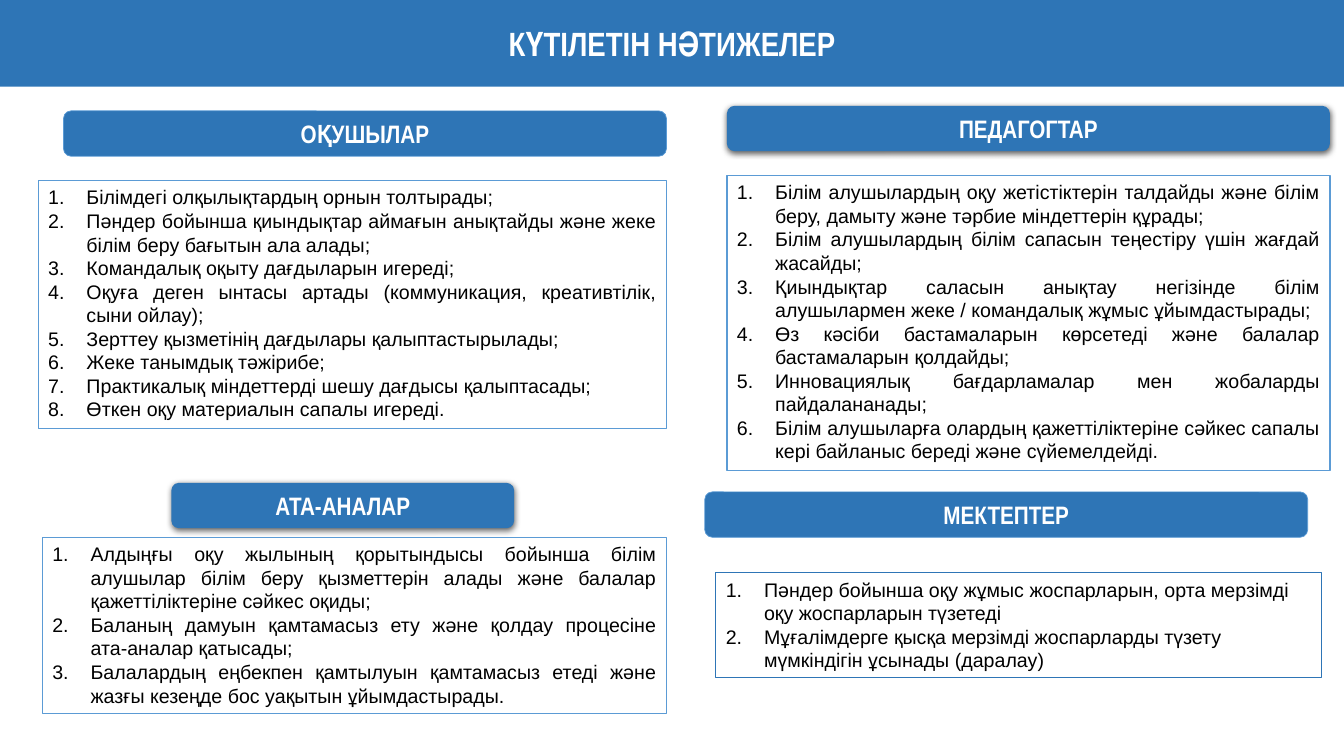
from dataclasses import dataclass

from lxml.etree import SubElement
from pptx import Presentation
from pptx.dml.color import RGBColor
from pptx.enum.shapes import MSO_SHAPE
from pptx.enum.text import MSO_ANCHOR, MSO_AUTO_SIZE, PP_ALIGN
from pptx.oxml.ns import qn
from pptx.util import Inches, Pt


@dataclass(frozen=True)
class Theme:
    band: RGBColor = RGBColor(0x2E, 0x75, 0xB6)
    outline: RGBColor = RGBColor(0x5B, 0x9B, 0xD5)
    white: RGBColor = RGBColor(0xFF, 0xFF, 0xFF)
    black: RGBColor = RGBColor(0, 0, 0)
    heading_font: str = "Arial Narrow"
    body_font: str = "Arial"
    title_size: int = 24
    heading_size: int = 18
    body_size: int = 14
    number_indent: float = 0.38


def apply_format(target, values):
    for name, value in values.items():
        setattr(target, name, value)


class OutcomesSlide:
    def __init__(self, deck, theme):
        self.theme = theme
        self.slide = deck.slides.add_slide(deck.slide_layouts[5])

    def place(self, shape, box):
        sides = ("left", "top", "width", "height")
        apply_format(shape, dict(zip(sides, map(Inches, box))))

    def paint(self, shape, fill=None, line=None, line_width=1):
        if fill is None:
            shape.fill.background()
        else:
            shape.fill.solid()
            shape.fill.fore_color.rgb = fill
        if line is None:
            shape.line.fill.background()
        else:
            shape.line.color.rgb = line
            shape.line.width = Pt(line_width)

    def set_text(self, shape, lines, anchor, align, font, size, color, bold=False):
        frame = shape.text_frame
        apply_format(frame, {"word_wrap": True, "auto_size": MSO_AUTO_SIZE.NONE,
                             "vertical_anchor": anchor})
        frame.text = "\n".join(lines)
        for paragraph in frame.paragraphs:
            paragraph.alignment = align
            run_font = paragraph.runs[0].font
            apply_format(run_font, {"name": font, "size": Pt(size), "bold": bold})
            run_font.color.rgb = color

    def set_heading_text(self, shape, text, size):
        self.set_text(shape, [text], MSO_ANCHOR.MIDDLE, PP_ALIGN.CENTER,
                      self.theme.heading_font, size, self.theme.white, bold=True)

    def add_box(self, preset, box):
        shape = self.slide.shapes.add_shape(preset, *map(Inches, box))
        shape.shadow.inherit = False
        return shape

    def title(self, text, box):
        banner = self.slide.shapes.title
        self.place(banner, box)
        self.paint(banner, self.theme.band)
        self.set_heading_text(banner, text, self.theme.title_size)

    def heading(self, text, box, raised):
        """Add a rounded heading, raised by a shadow or outlined."""
        plate = self.add_box(MSO_SHAPE.ROUNDED_RECTANGLE, box)
        self.paint(plate, self.theme.band, None if raised else self.theme.outline, 0.5)
        if raised:
            self.cast_shadow(plate)
        self.set_heading_text(plate, text, self.theme.heading_size)

    def cast_shadow(self, shape):
        effects = shape._element.spPr.find(qn("a:effectLst"))
        shadow = SubElement(effects, qn("a:outerShdw"), blurRad=str(Pt(4.5)),
                            dist=str(Pt(1.5)), dir="5400000", rotWithShape="0")
        color = SubElement(shadow, qn("a:srgbClr"), val=str(self.theme.black))
        SubElement(color, qn("a:alpha"), val="63000")

    def numbered_list(self, items, box, align, **paint):
        panel = self.add_box(MSO_SHAPE.RECTANGLE, box)
        self.paint(panel, **paint)
        self.set_text(panel, items, MSO_ANCHOR.TOP, align, self.theme.body_font,
                      self.theme.body_size, self.theme.black)
        indent = Inches(self.theme.number_indent)
        for paragraph in panel.text_frame.paragraphs:
            properties = paragraph._p.get_or_add_pPr()
            properties.set("marL", str(indent))
            properties.set("indent", str(-indent))
            SubElement(properties, qn("a:buFont"), typeface="+mj-lt")
            SubElement(properties, qn("a:buAutoNum"), type="arabicPeriod")


def main():
    theme = Theme()
    deck = Presentation()
    apply_format(deck, {"slide_width": Inches(13.33), "slide_height": Inches(7.5)})
    outcomes = OutcomesSlide(deck, theme)
    outcomes.title("КҮТІЛЕТІН НӘТИЖЕЛЕР", (0, 0, 13.33, 0.86))

    justified = {"align": PP_ALIGN.JUSTIFY, "fill": theme.white, "line": theme.outline}
    plain = {"align": PP_ALIGN.LEFT, "line": theme.band, "line_width": 0.75}
    # heading, heading box, raised, list box, list format, items
    groups = [
        ("ОҚУШЫЛАР", (0.63, 1.1, 5.98, 0.45), False, (0.38, 1.79, 6.23, 2.46), justified, [
            "Білімдегі олқылықтардың орнын толтырады;",
            "Пәндер бойынша қиындықтар аймағын анықтайды және жеке білім беру бағытын ала алады;",
            "Командалық оқыту дағдыларын игереді;",
            "Оқуға деген ынтасы артады (коммуникация, креативтілік, сыни ойлау);",
            "Зерттеу қызметінің дағдылары қалыптастырылады;",
            "Жеке танымдық тәжірибе;",
            "Практикалық міндеттерді шешу дағдысы қалыптасады;",
            "Өткен оқу материалын сапалы игереді.",
        ]),
        ("ПЕДАГОГТАР", (7.21, 1.05, 5.98, 0.45), True, (7.21, 1.74, 5.98, 2.93), justified, [
            "Білім алушылардың оқу жетістіктерін талдайды және білім беру, дамыту "
            "және тәрбие міндеттерін құрады;",
            "Білім алушылардың білім сапасын теңестіру үшін жағдай жасайды;",
            "Қиындықтар саласын анықтау негізінде білім алушылармен жеке / "
            "командалық жұмыс ұйымдастырады;",
            "Өз кәсіби бастамаларын көрсетеді және балалар бастамаларын қолдайды;",
            "Инновациялық бағдарламалар мен жобаларды пайдалананады;",
            "Білім алушыларға олардың қажеттіліктеріне сәйкес сапалы кері байланыс "
            "береді және сүйемелдейді.",
        ]),
        ("АТА-АНАЛАР", (1.7, 4.79, 3.4, 0.45), True, (0.42, 5.33, 6.19, 1.75), justified, [
            "Алдыңғы оқу жылының қорытындысы бойынша білім алушылар білім беру "
            "қызметтерін алады және балалар қажеттіліктеріне сәйкес оқиды;",
            "Баланың дамуын қамтамасыз ету және қолдау процесіне ата-аналар қатысады;",
            "Балалардың еңбекпен қамтылуын қамтамасыз етеді және жазғы кезеңде бос "
            "уақытын ұйымдастырады.",
        ]),
        ("МЕКТЕПТЕР", (6.99, 4.88, 5.98, 0.45), False, (7.1, 5.68, 6.01, 1.04), plain, [
            "Пәндер бойынша оқу жұмыс жоспарларын, орта мерзімді оқу жоспарларын түзетеді",
            "Мұғалімдерге қысқа мерзімді жоспарларды түзету мүмкіндігін ұсынады (даралау)",
        ]),
    ]
    for name, heading_box, raised, list_box, list_format, items in groups:
        outcomes.heading(name, heading_box, raised)
        outcomes.numbered_list(items, list_box, **list_format)
    deck.save("out.pptx")


if __name__ == "__main__":
    main()
